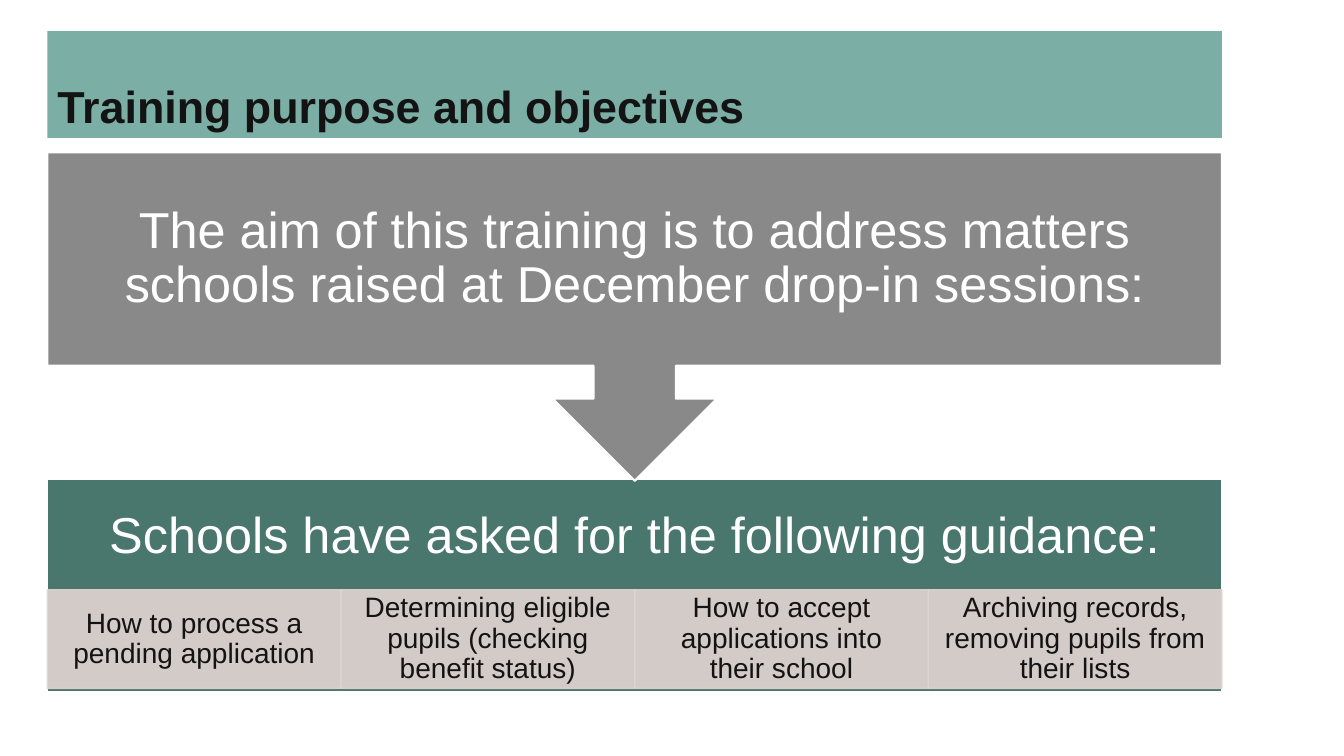
from dataclasses import dataclass

from lxml import etree
from pptx import Presentation
from pptx.dml.color import RGBColor
from pptx.enum import shapes, text
from pptx.oxml.ns import qn
from pptx.util import Inches, Pt


@dataclass(frozen=True)
class Theme:
    font: str = "Arial"
    ink: str = "131313"
    white: str = "FFFFFF"
    mint: str = "7BAEA4"
    teal: str = "49766D"
    grey: str = "898989"
    sand: str = "E1D5D2"
    title: int = 32
    head: int = 36
    body: int = 20


THEME = Theme()
KIND = shapes.MSO_SHAPE
ANCHOR = text.MSO_ANCHOR
ALIGN = text.PP_ALIGN
TOPICS = (
    "How to process a pending application",
    "Determining eligible pupils (checking benefit status)",
    "How to accept applications into their school",
    "Archiving records, removing pupils from their lists",
)


def fade(paint, alpha):
    """Set the opacity, in percent, of a solid fill in the given XML parent."""
    color = paint.find(qn("a:solidFill"))[0]
    etree.SubElement(color, qn("a:alpha")).set("val", str(alpha * 1000))


def block(slide, box, fill, line=None, width=1.5, kind=KIND.RECTANGLE):
    """Add a filled shape; box is left, top, width, height in inches."""
    shape = slide.shapes.add_shape(kind, *map(Inches, box))
    shape.shadow.inherit = False
    shape.fill.solid()
    shape.fill.fore_color.rgb = RGBColor.from_string(fill)
    if line:
        shape.line.color.rgb = RGBColor.from_string(line)
        shape.line.width = Pt(width)
    else:
        shape.line.fill.background()
    return shape


def write(shape, words, size, color, inset, bold=False,
          align=ALIGN.CENTER, anchor=ANCHOR.MIDDLE):
    """Put one paragraph in a shape; inset is side and top/bottom in inches."""
    frame = shape.text_frame
    frame.word_wrap = True
    frame.vertical_anchor = anchor
    side, edge = map(Inches, inset)
    frame.margin_left = frame.margin_right = side
    frame.margin_top = frame.margin_bottom = edge
    para = frame.paragraphs[0]
    para.alignment = align
    para.line_spacing = 0.9
    run = para.add_run()
    run.text = words
    run.font.name = THEME.font
    run.font.size = Pt(size)
    run.font.bold = bold
    run.font.color.rgb = RGBColor.from_string(color)


def label(slide, box, words):
    """Add a large white heading in its own text box."""
    area = slide.shapes.add_textbox(*map(Inches, box))
    write(area, words, THEME.head, THEME.white, (0.28, 0.28))


def banner(slide, box):
    shape = block(slide, box, THEME.mint)
    write(shape, "Training purpose and objectives", THEME.title, THEME.ink,
          (0.1, 0.05), True, ALIGN.LEFT, ANCHOR.BOTTOM)


def guidance(slide, box):
    """Add the teal panel with its heading and a row of topics."""
    left, top, width, height = box
    block(slide, box, THEME.teal, THEME.white)
    label(slide, (left, top, width, 1.15),
          "Schools have asked for the following guidance:")
    step = width / len(TOPICS)
    for i, topic in enumerate(TOPICS):
        cell = block(slide, (left + i * step, top + 1.1, step, 0.98),
                     THEME.sand, THEME.sand, 1)
        props = cell._element.spPr
        fade(props, 90)
        fade(props.find(qn("a:ln")), 90)
        write(cell, topic, THEME.body, THEME.ink, (0.16, 0.03))


def aim(slide, box):
    """Add the grey callout that points down to the next panel."""
    left, top, width, height = box
    arrow = block(slide, box, THEME.grey, THEME.white,
                  kind=KIND.UP_ARROW_CALLOUT)
    arrow.rotation = 180
    label(slide, (left, top, width, height * 0.65),
          "The aim of this training is to address matters "
          "schools raised at December drop-in sessions:")


def main():
    deck = Presentation()
    deck.slide_width, deck.slide_height = Inches(13.33), Inches(7.5)
    slide = deck.slides.add_slide(deck.slide_layouts[6])
    left, width = 0.47, 11.65
    banner(slide, (left, 0.31, width, 1.06))
    guidance(slide, (left, 4.75, width, 2.12))
    aim(slide, (left, 1.51, width, 3.26))
    deck.save("out.pptx")


if __name__ == "__main__":
    main()
